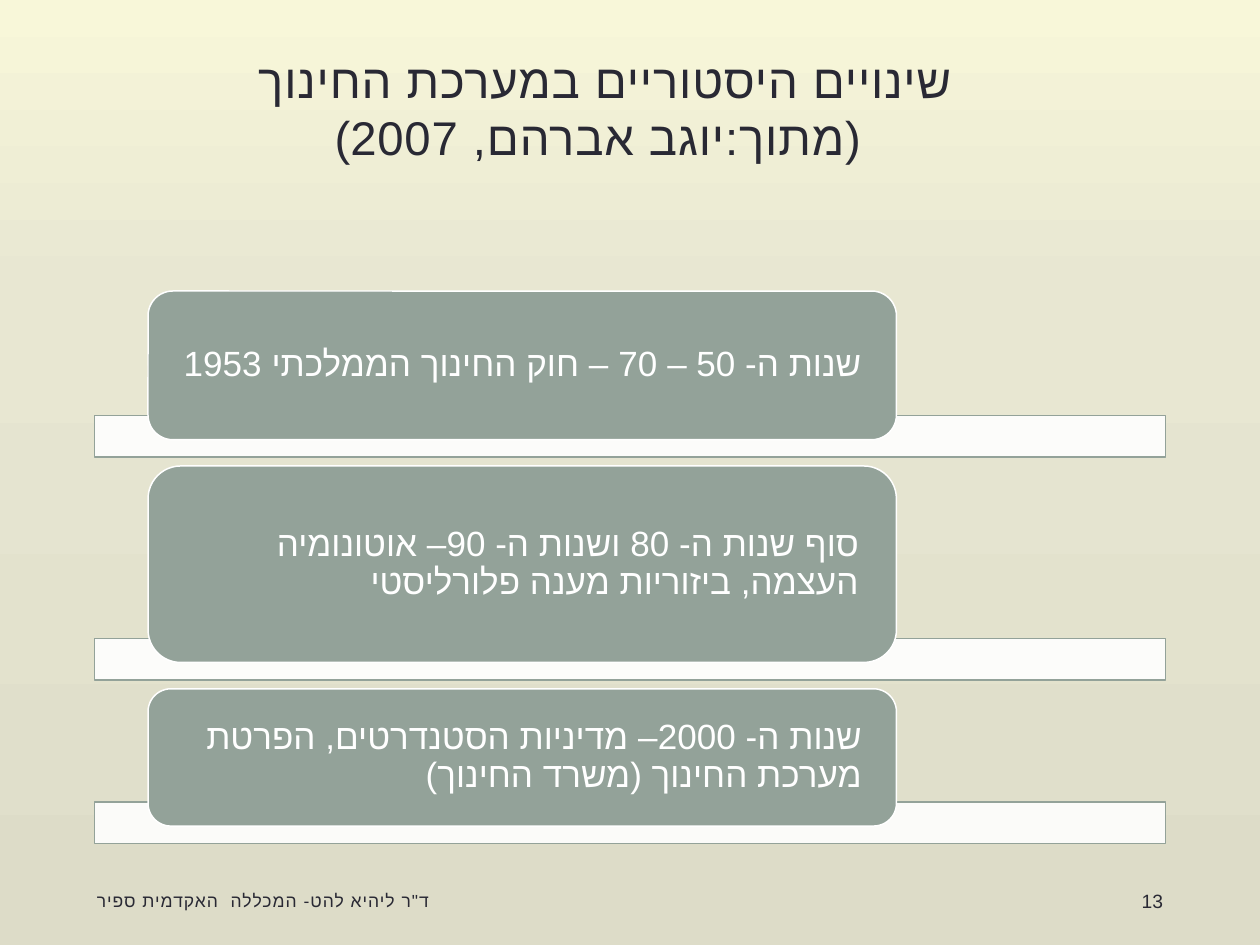
from copy import deepcopy
from lxml import etree
from pptx import Presentation, util as u
from pptx.dml import color as c
from pptx.enum import shapes, text
from pptx.oxml import ns

presentation = Presentation()
presentation.slide_width = u.Inches(10)
presentation.slide_height = u.Inches(7.5)
slide = presentation.slides.add_slide(presentation.slide_layouts[6])
column = presentation.slide_width / 100
row = presentation.slide_height / 100


def rgb(value):
    return c.RGBColor.from_string(value)


def write(shape, words, size, color="292934", align=text.PP_ALIGN.RIGHT,
          anchor=text.MSO_ANCHOR.MIDDLE, line_spacing=None, tracking=0, side=0.1, ends=0.05):
    frame = shape.text_frame
    frame.word_wrap = True
    frame.vertical_anchor = anchor
    frame.margin_left = frame.margin_right = u.Inches(side)
    frame.margin_top = frame.margin_bottom = u.Inches(ends)
    paragraph = frame.paragraphs[0]
    paragraph.text = words
    paragraph.alignment = align
    paragraph.line_spacing = line_spacing
    paragraph._p.get_or_add_pPr().set("rtl", "1")
    for run in paragraph.runs:
        run.font.size = u.Pt(size)
        run.font.name = "Arial Narrow"
        run.font.color.rgb = rgb(color)
        properties = run._r.get_or_add_rPr()
        properties.set("lang", "he-IL")
        etree.SubElement(properties, ns.qn("a:cs"), typeface="Arial")
        if tracking:
            properties.set("spc", str(int(tracking * 100)))


background = slide.background.fill
background.gradient()
background.gradient_angle = 270
stop_list = background.gradient_stops[0]._gs.getparent()
stop_list.insert(1, deepcopy(stop_list[0]))
backdrop = [(0, "F8F7D9"), (0.31, "E8E7D2"), (1, "DDDCC8")]
for stop, (position, color) in zip(background.gradient_stops, backdrop):
    stop.position = position
    stop.color.rgb = rgb(color)

title = slide.shapes.add_textbox(0, int(5.87 * row), int(95 * column), int(12.27 * row))
write(title, "שינויים היסטוריים במערכת החינוך \n(מתוך:יוגב אברהם, 2007)", 27,
      align=text.PP_ALIGN.CENTER, anchor=text.MSO_ANCHOR.BOTTOM, tracking=0.5)

periods = [
    (15.73, "שנות ה- 50 – 70 – חוק החינוך הממלכתי 1953"),
    (20.8, "סוף שנות ה- 80 ושנות ה- 90– אוטונומיה העצמה, ביזוריות מענה פלורליסטי "),
    (14.53, "שנות ה- 2000– מדיניות הסטנדרטים, הפרטת מערכת החינוך (משרד החינוך) "),
]
bar_height, overlap, gap = 4.4, 2.55, 0.93
top = 30.8
for height, words in periods:
    bar_top = top + height - overlap
    bar = slide.shapes.add_shape(shapes.MSO_SHAPE.RECTANGLE, int(7.5 * column),
                                 int(bar_top * row), int(85 * column), int(bar_height * row))
    card = slide.shapes.add_shape(shapes.MSO_SHAPE.ROUNDED_RECTANGLE, int(11.75 * column),
                                  int(top * row), int(59.4 * column), int(height * row))
    for shape, fill, line in [(bar, "FFFFFF", "93A299"), (card, "93A299", "FFFFFF")]:
        shape.shadow.inherit = False
        shape.fill.solid()
        shape.fill.fore_color.rgb = rgb(fill)
        shape.line.color.rgb = rgb(line)
        shape.line.width = u.Pt(0.85)
    bar_color = bar._element.spPr.find(ns.qn("a:solidFill"))[0]
    etree.SubElement(bar_color, ns.qn("a:alpha"), val="90000")
    write(card, words, 20, color="FFFFFF", line_spacing=0.9, side=0.22, ends=0)
    top = bar_top + bar_height + gap

footer = slide.shapes.add_textbox(int(6.7 * column), int(92.67 * row),
                                  int(31.7 * column), int(5.33 * row))
write(footer, "ד\"ר ליהיא להט- המכללה  האקדמית ספיר", 10,
      align=text.PP_ALIGN.LEFT, tracking=0.6)
number = slide.shapes.add_textbox(int(82.5 * column), int(92.67 * row),
                                  int(10.8 * column), int(5.33 * row))
write(number, "13", 11)

presentation.save("out.pptx")
